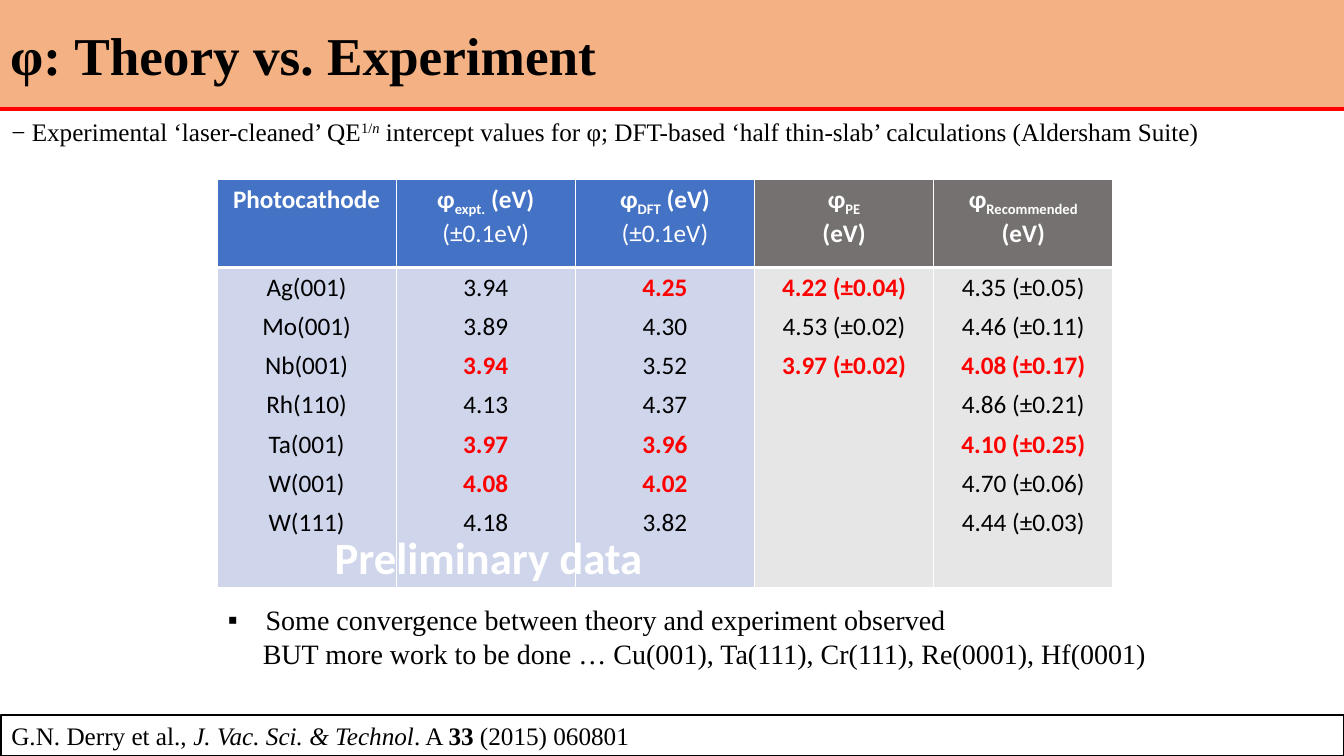
"""Build the slide comparing theoretical and measured work functions."""
from dataclasses import dataclass

from lxml.etree import SubElement
from pptx import Presentation
from pptx.dml.color import RGBColor as RGB
from pptx.enum.shapes import MSO_CONNECTOR as LINK, MSO_SHAPE as SHAPE
from pptx.enum.text import MSO_ANCHOR as ANCHOR, PP_ALIGN as ALIGN
from pptx.oxml.ns import qn
from pptx.util import Pt


@dataclass(frozen=True)
class Theme:
    serif: str = "Times New Roman"
    sans: str = "Calibri"
    black: str = "000000"
    white: str = "FFFFFF"
    red: str = "FF0000"
    peach: str = "F4B183"
    blue: str = "4472C4"
    pale: str = "CFD5EA"
    gray: str = "767171"
    light: str = "E7E6E6"
    head: int = 38
    mark: int = 32
    list: int = 20
    text: int = 18


def write(frame, lines, look, align=ALIGN.LEFT, after=0):
    """Fill a text frame with lines, each a list of (text, changes) runs."""
    frame.word_wrap = True
    for i, line in enumerate(lines):
        para = frame.paragraphs[0] if i == 0 else frame.add_paragraph()
        form = {"alignment": align, "line_spacing": 1.0,
                "space_before": Pt(0), "space_after": Pt(after)}
        for key, value in form.items():
            setattr(para, key, value)
        for text, change in line:
            run = para.add_run()
            run.text = text
            font = {"bold": False, "italic": False, **look, **change}
            run.font.color.rgb = RGB.from_string(font.pop("ink"))
            base = font.pop("base", 0)
            for key, value in font.items():
                setattr(run.font, key, value)
            if base:
                run._r.get_or_add_rPr().set("baseline", str(base * 1000))


def edge(cell, side, width):
    """Draw one white border of a table cell."""
    line = SubElement(cell._tc.get_or_add_tcPr(), qn("a:ln" + side), w=str(Pt(width)))
    fill = SubElement(line, qn("a:solidFill"))
    SubElement(fill, qn("a:srgbClr"), val=theme.white)


theme = Theme()
serif = {"name": theme.serif, "size": Pt(theme.text), "ink": theme.black}
sans = {**serif, "name": theme.sans}
bold, slant = {"bold": True}, {"italic": True}
sub, sup = {"base": -25}, {"base": 30}

deck = Presentation()
deck.slide_width, deck.slide_height = Pt(960), Pt(540)
slide = deck.slides.add_slide(deck.slide_layouts[1])
shapes = slide.shapes
title, body = slide.placeholders

band = shapes.add_shape(SHAPE.RECTANGLE, 0, 0, Pt(960), Pt(78))
band.shadow.inherit = False
band.fill.solid()
band.fill.fore_color.rgb = RGB.from_string(theme.peach)
band.line.fill.background()

rule = shapes.add_connector(LINK.STRAIGHT, 0, Pt(78), Pt(960), Pt(78))
rule.line.color.rgb = RGB.from_string(theme.red)
rule.line.width = Pt(3)
SubElement(rule.element.spPr, qn("a:effectLst"))

shapes.element.append(title.element)
shapes.element.append(body.element)
note = shapes.add_textbox(Pt(1), Pt(79.2), Pt(959), Pt(29))

places = [(title, (0, 12.2, 744, 53.3)), (body, (155.5, 427, 680, 55.5))]
for box, spot in places:
    for key, value in zip(("left", "top", "width", "height"), spot):
        setattr(box, key, Pt(value))
    box.text_frame.vertical_anchor = ANCHOR.TOP

write(title.text_frame, [[("φ: Theory vs. Experiment", bold)]],
      {**serif, "size": Pt(theme.head)})
write(body.text_frame, [
    [("Some convergence between theory and experiment observed", {})],
    [("BUT more work to be done … Cu(001), Ta(111), Cr(111), Re(0001), Hf(0001)", {})],
], {**serif, "size": Pt(theme.list)})
for para, left, hang, sign in zip(body.text_frame.paragraphs, (27, 25), (-27, 0), ("▪", "")):
    props = para._p.get_or_add_pPr()
    props.set("marL", str(Pt(left)))
    props.set("indent", str(Pt(hang)))
    if sign:
        SubElement(props, qn("a:buChar"), char=sign)
    else:
        SubElement(props, qn("a:buNone"))

write(note.text_frame, [[
    ("− Experimental ‘laser-cleaned’ QE", {}), ("1/", sup), ("n", {**sup, **slant}),
    (" intercept values for φ; DFT-based ‘half thin-slab’ calculations (Aldersham Suite)", {}),
]], serif)

error = [("(±0.1eV)", {"bold": False})]
unit = [("(eV)", {})]
heads = [
    [[("Photocathode", {})]],
    [[("φ", {}), ("expt.", sub), (" (eV)", {})], error],
    [[("φ", {}), ("DFT", sub), (" (eV)", {})], error],
    [[("φ", {}), ("PE", sub)], unit],
    [[("φ", {}), ("Recommended", sub)], unit],
]
data = [
    ["Ag(001)", "Mo(001)", "Nb(001)", "Rh(110)", "Ta(001)", "W(001)", "W(111)"],
    ["3.94", "3.89", "3.94", "4.13", "3.97", "4.08", "4.18"],
    ["4.25", "4.30", "3.52", "4.37", "3.96", "4.02", "3.82"],
    ["4.22 (±0.04)", "4.53 (±0.02)", "3.97 (±0.02)"],
    ["4.35 (±0.05)", "4.46 (±0.11)", "4.08 (±0.17)", "4.86 (±0.21)",
     "4.10 (±0.25)", "4.70 (±0.06)", "4.44 (±0.03)"],
]
close = [(), (2, 4, 5), (0, 4, 5), (0, 2), (2, 4)]
hot = {"ink": theme.red, "bold": True}

table = shapes.add_table(2, 5, Pt(155), Pt(128), Pt(640), Pt(292)).table
table.horz_banding = False
for row, height in zip(table.rows, (63, 229)):
    row.height = Pt(height)
for col, (head, vals, reds) in enumerate(zip(heads, data, close)):
    table.columns[col].width = Pt(128)
    top, low = table.cell(0, col), table.cell(1, col)
    fills = (theme.blue, theme.pale) if col < 3 else (theme.gray, theme.light)
    for cell, fill, widths in zip((top, low), fills, ((1, 1, 1, 3), (1, 1, 3, 1))):
        for side, width in zip("LRTB", widths):
            edge(cell, side, width)
        cell.fill.solid()
        cell.fill.fore_color.rgb = RGB.from_string(fill)
    write(top.text_frame, head, {**sans, **bold, "ink": theme.white}, ALIGN.CENTER)
    lines = [[(val, hot if i in reds else {})] for i, val in enumerate(vals)]
    write(low.text_frame, lines, sans, ALIGN.CENTER, 6)

foot = shapes.add_shape(SHAPE.RECTANGLE, Pt(1), Pt(511), Pt(959), Pt(29))
foot.shadow.inherit = False
foot.fill.solid()
foot.fill.fore_color.rgb = RGB.from_string(theme.white)
foot.line.color.rgb = RGB.from_string(theme.black)
foot.line.width = Pt(1.5)
write(foot.text_frame, [[
    ("G.N. Derry et al., ", {}), ("J. Vac. Sci. & Technol", slant), (". A ", {}),
    ("33", bold), (" (2015) 060801", {}),
]], serif)

mark = shapes.add_textbox(Pt(193), Pt(375), Pt(312), Pt(46))
write(mark.text_frame, [[("Preliminary data", bold)]],
      {**sans, "size": Pt(theme.mark), "ink": theme.white}, ALIGN.CENTER)

deck.save("out.pptx")
